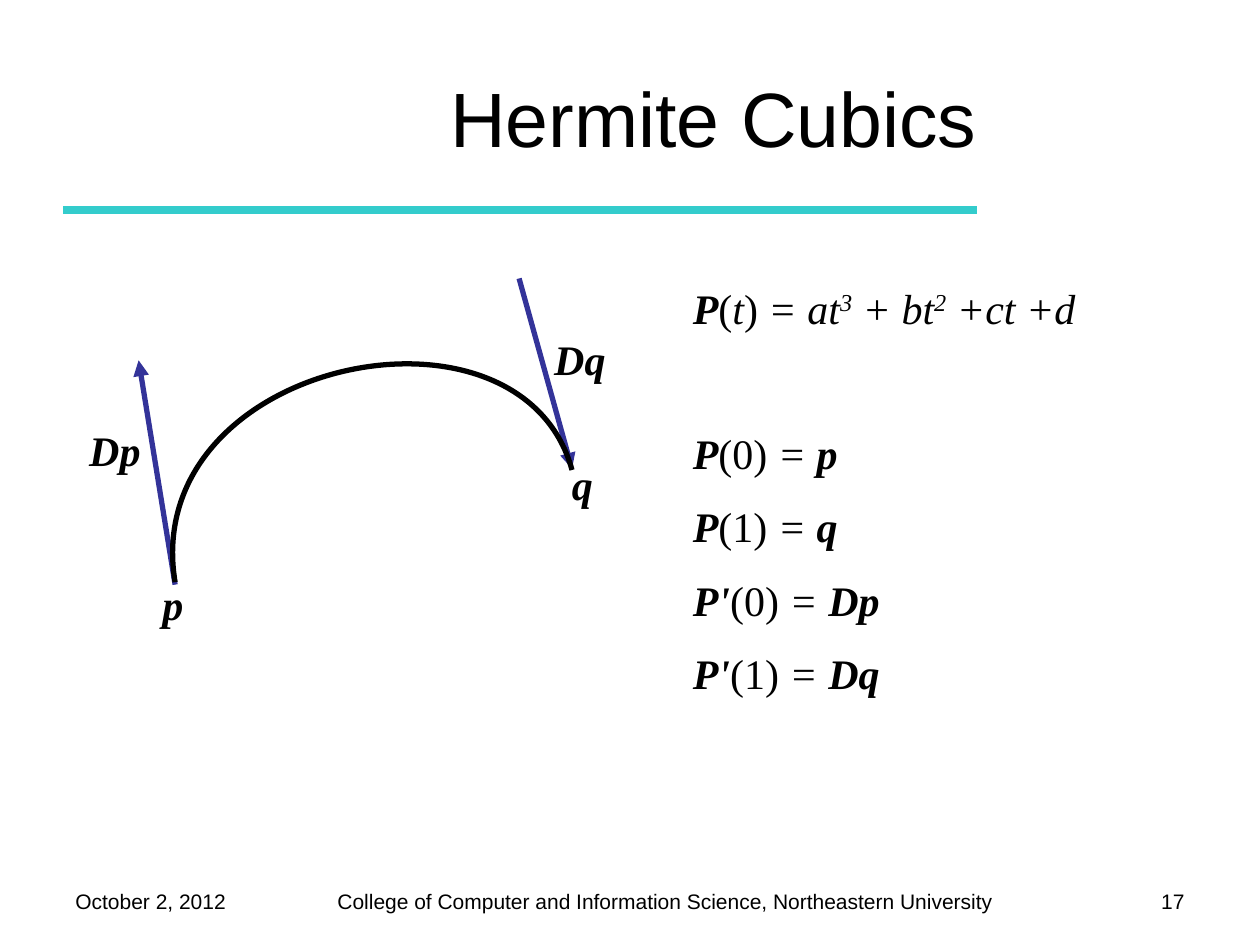
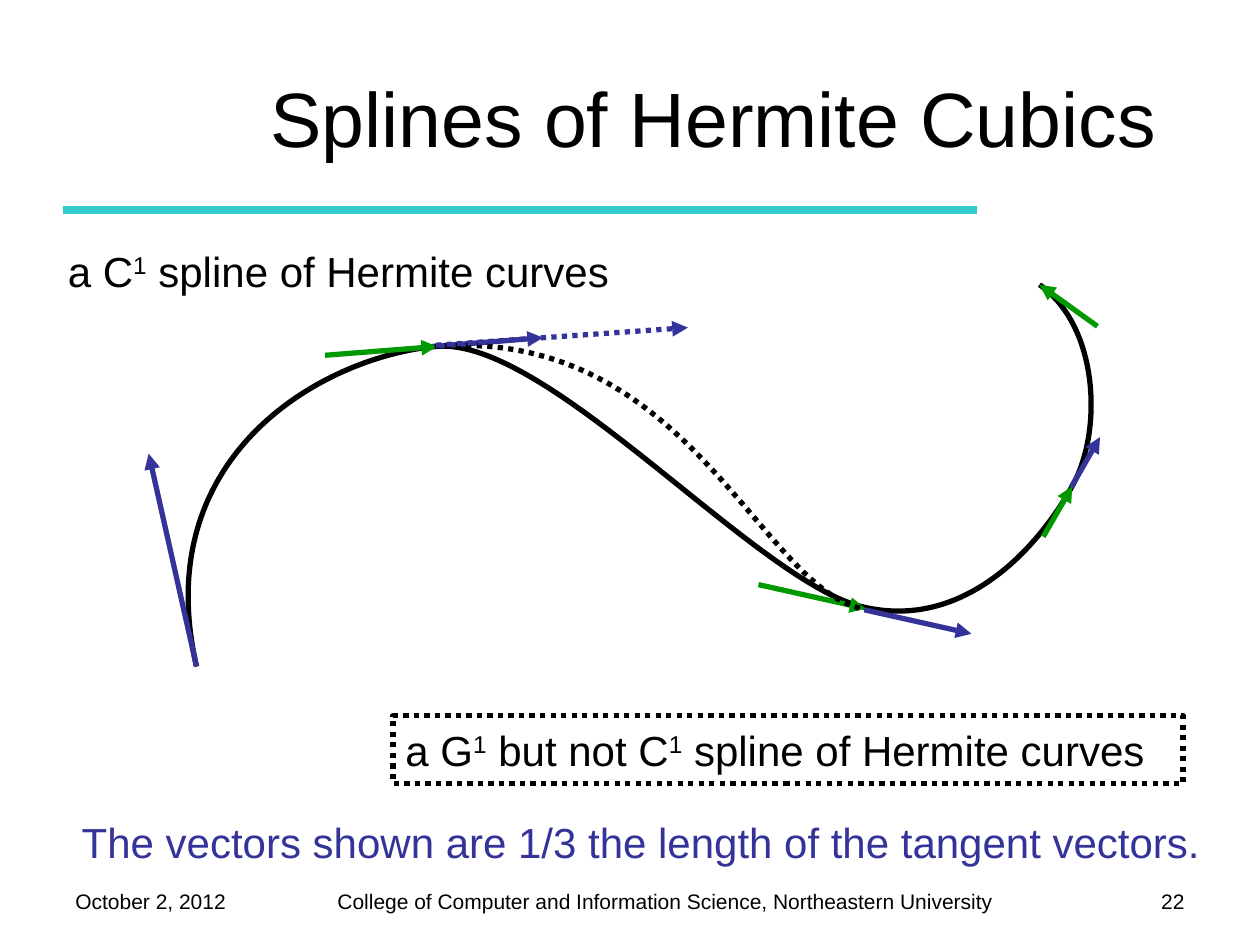
from pptx import Presentation
from pptx.dml.color import RGBColor
from pptx.enum.dml import MSO_LINE
from pptx.enum.shapes import MSO_CONNECTOR, MSO_SHAPE
from pptx.enum.text import MSO_ANCHOR, PP_ALIGN
from pptx.oxml.ns import qn
from pptx.util import Inches, Pt
from lxml.etree import SubElement

BLACK = RGBColor(0x00, 0x00, 0x00)
TEAL = RGBColor(0x33, 0xCC, 0xCC)
BLUE = RGBColor(0x33, 0x33, 0x99)
GREEN = RGBColor(0x00, 0x99, 0x00)
SANS, SERIF = "Arial", "Times New Roman"
DATE = "October 2, 2012"
COLLEGE = "College of Computer and Information Science, Northeastern University"
DOTS = MSO_LINE.ROUND_DOT


def write(p, runs, size=24, font=SANS, color=BLACK, align=PP_ALIGN.LEFT):
    """Fill a paragraph with (text, marks) runs; marks are b, i and ^."""
    p.alignment = align
    p.font.size, p.font.name = Pt(size), font
    p.font.color.rgb = color
    for text, marks in runs:
        r = p.add_run()
        r.text = text
        if "b" in marks:
            r.font.bold = True
        if "i" in marks:
            r.font.italic = True
        if "^" in marks:
            r._r.get_or_add_rPr().set("baseline", "30000")


def add_text(s, box, runs, **style):
    """Add a wrapping text box with one paragraph and return its frame."""
    tf = s.shapes.add_textbox(*map(Inches, box)).text_frame
    tf.word_wrap = True
    write(tf.paragraphs[0], runs, **style)
    return tf


def set_line(line, color, width=3, dash=None):
    """Set the colour, width and dash of a line."""
    line.color.rgb = color
    line.width = Pt(width)
    if dash:
        line.dash_style = dash


def add_line(s, start, end, color, width=3, dash=None, arrow=True):
    """Add a straight line, with an arrowhead at its end by default."""
    c = s.shapes.add_connector(MSO_CONNECTOR.STRAIGHT, *map(Inches, start + end))
    set_line(c.line, color, width, dash)
    spPr = c._element.spPr
    if arrow:
        SubElement(spPr.find(qn("a:ln")), qn("a:tailEnd"), type="triangle")
    SubElement(spPr, qn("a:effectLst"))


def add_curve(s, points, dash=None):
    """Add a chain of cubic curves from a start and triples of control points."""
    start, *rest = [tuple(map(Inches, point)) for point in points]
    fb = s.shapes.build_freeform(*start)
    fb.add_line_segments(rest, close=False)
    sp = fb.convert_to_shape()
    sp.shadow.inherit = False
    sp.fill.background()
    set_line(sp.line, BLACK, dash=dash)
    path = next(sp._element.iter(qn("a:path")))
    segments = path.findall(qn("a:lnTo"))
    for i in range(0, len(segments), 3):
        cubic = SubElement(path, qn("a:cubicBezTo"))
        for segment in segments[i:i + 3]:
            cubic.append(segment[0])
            path.remove(segment)


def add_slide(prs, title, number):
    """Add a slide with title, rule and footer."""
    s = prs.slides.add_slide(prs.slide_layouts[5])
    add_text(s, (2.58, 7, 5.5, 0.3), [(COLLEGE, "")], size=12)
    add_line(s, (0.5, 1.67), (7.75, 1.67), TEAL, 4.5, arrow=False)
    add_text(s, (0.5, 7, 1.75, 0.33), [(DATE, "")], size=12)
    add_text(s, (8.67, 7, 0.83, 0.35), [(number, "")], size=12, align=PP_ALIGN.RIGHT)
    sp = s.shapes.title
    sp.left, sp.top, sp.width, sp.height = map(Inches, (1.83, 0.3, 7.67, 1.25))
    sp.text_frame.vertical_anchor = MSO_ANCHOR.MIDDLE
    write(sp.text_frame.paragraphs[0], [(title, "")], size=44, align=PP_ALIGN.CENTER)
    return s


def add_equations(s):
    """Add the cubic and its four end conditions."""
    cubic = [("P", "bi"), ("(", ""), ("t", "i"), (")", ""), (" = at", "i"),
             ("3", "i^"), (" + bt", "i"), ("2", "i^"), (" +ct +d", "i")]
    tf = add_text(s, (5.4, 2.19, 4.07, 3.49), cubic, font=SERIF)
    conditions = [("P", "(0)", "p"), ("P", "(1)", "q"),
                  ("P'", "(0)", "Dp"), ("P'", "(1)", "Dq")]
    for i, (name, argument, value) in enumerate(conditions):
        p = tf.add_paragraph()
        p.space_before = Pt(13.2 if i else 54)
        write(p, [(name, "bi"), (argument, ""), (" = ", "i"), (value, "bi")], font=SERIF)


def add_framed_text(s, box, runs):
    """Add text in a dotted frame."""
    sp = s.shapes.add_shape(MSO_SHAPE.RECTANGLE, *map(Inches, box))
    sp.shadow.inherit = False
    sp.fill.background()
    set_line(sp.line, BLACK, dash=DOTS)
    tf = sp.text_frame
    tf.word_wrap = True
    write(tf.paragraphs[0], runs)


def cubics_slide(prs):
    """Build the slide on a single cubic."""
    s = add_slide(prs, "Hermite Cubics", "17")
    add_line(s, (4.12, 2.21), (4.54, 3.72), BLUE)
    add_line(s, (1.39, 4.64), (1.1, 2.86), BLUE)
    add_curve(s, [(1.39, 4.62), (1.1, 2.86), (4.13, 2.23), (4.54, 3.73)])
    labels = [("p", 1.19, 4.54, 0.45), ("q", 4.44, 3.59, 0.45),
              ("Dp", 0.61, 3.32, 0.71), ("Dq", 4.3, 2.6, 0.71)]
    for label, left, top, width in labels:
        add_text(s, (left, top, width, 0.5), [(label, "bi")], font=SERIF)
    add_equations(s)


def splines_slide(prs):
    """Build the slide on joined cubics."""
    s = add_slide(prs, "Splines of Hermite Cubics", "22")
    add_curve(s, [(1.56, 5.29),
                  (1.17, 3.6), (2.58, 2.83), (3.46, 2.75),
                  (4.35, 2.67), (6.02, 4.64), (6.86, 4.82),
                  (7.7, 5.01), (8.29, 4.27), (8.52, 3.84),
                  (8.75, 3.41), (8.72, 2.59), (8.25, 2.26)])
    outgoing = [((1.56, 5.29), (1.18, 3.6)), ((3.43, 2.75), (4.31, 2.68)),
                ((6.86, 4.84), (7.71, 5.03)), ((8.5, 3.87), (8.73, 3.47))]
    incoming = [((2.58, 2.82), (3.47, 2.75)), ((6.02, 4.64), (6.87, 4.83)),
                ((8.28, 4.26), (8.51, 3.86)), ((8.71, 2.59), (8.25, 2.26))]
    for color, vectors in ((BLUE, outgoing), (GREEN, incoming)):
        for start, end in vectors:
            add_line(s, start, end, color)
    add_curve(s, [(3.45, 2.75), (5.46, 2.59), (6.02, 4.65), (6.84, 4.83)], DOTS)
    add_line(s, (3.46, 2.74), (5.46, 2.6), BLUE, dash=DOTS)
    ending = [("1", "^"), (" spline of Hermite curves", "")]
    add_text(s, (0.44, 1.9, 5.27, 0.5), [("a C", "")] + ending)
    add_framed_text(s, (3.12, 5.68, 6.27, 0.54),
                    [("a G", ""), ("1", "^"), (" but not C", "")] + ending)
    add_text(s, (0.55, 6.43, 9.32, 0.5),
             [("The vectors shown are 1/3 the length of the tangent vectors.", "")],
             color=BLUE)


def main():
    """Build and save both slides."""
    prs = Presentation()
    prs.slide_width, prs.slide_height = Inches(10), Inches(7.5)
    cubics_slide(prs)
    splines_slide(prs)
    prs.save("out.pptx")


if __name__ == "__main__":
    main()
